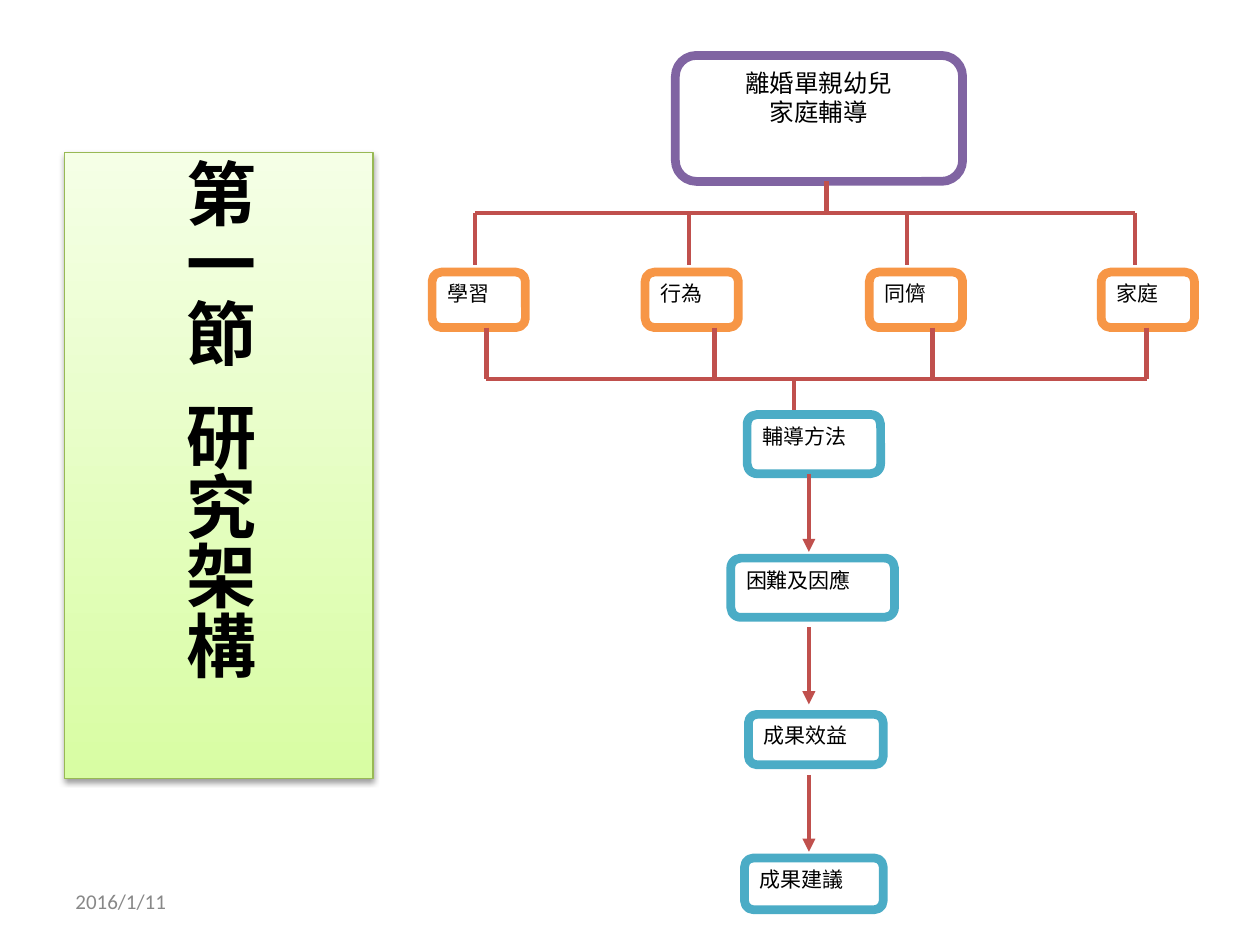
from lxml.etree import SubElement
from pptx import Presentation
from pptx.dml.color import RGBColor
from pptx.enum.shapes import MSO_CONNECTOR, MSO_SHAPE
from pptx.enum.text import MSO_ANCHOR, PP_ALIGN
from pptx.oxml import parse_xml
from pptx.oxml.ns import nsdecls, qn
from pptx.util import Inches, Pt

WHITE = RGBColor(0xFF, 0xFF, 0xFF)
BLACK = RGBColor(0x00, 0x00, 0x00)
GRAY = RGBColor(0x88, 0x88, 0x88)
PURPLE = RGBColor(0x80, 0x64, 0xA2)
ORANGE = RGBColor(0xF7, 0x96, 0x46)
TEAL = RGBColor(0x4B, 0xAC, 0xC6)
RED = RGBColor(0xC0, 0x50, 0x4D)
GREEN = RGBColor(0x98, 0xB9, 0x54)
GREEN_TOP = RGBColor(0xF5, 0xFF, 0xE6)
GREEN_BOTTOM = RGBColor(0xD8, 0xFD, 0xA3)

# Flowchart grid, in inches
UPPER_BAR, LOWER_BAR = 1.69, 3.01
ASPECT_TOP, ASPECT_HEIGHT = 2.16, 0.44
ARROW_X = 6.42

# Label, box left, upper branch x, lower branch x
ASPECTS = [
    ("學習", 3.43, 3.77, 3.86),
    ("行為", 5.12, 5.47, 5.67),
    ("同儕", 6.90, 7.20, 7.40),
    ("家庭", 8.74, 9.01, 9.10),
]
# Label and box place
STEPS = [
    ("輔導方法", (5.93, 3.29, 1.06, 0.47)),
    ("困難及因應", (5.80, 4.43, 1.30, 0.47)),
    ("成果效益", (5.94, 5.67, 1.07, 0.40)),
    ("成果建議", (5.91, 6.81, 1.10, 0.41)),
]
ARROWS = [(3.76, 4.38), (4.98, 5.59), (6.15, 6.76)]


def write_text(shape, text, size=12, color=BLACK, font="Calibri", bold=False,
               align=PP_ALIGN.LEFT, anchor=MSO_ANCHOR.TOP):
    frame = shape.text_frame
    frame.word_wrap = True
    frame.vertical_anchor = anchor
    frame.text = text
    for paragraph in frame.paragraphs:
        paragraph.alignment = align
        paragraph.font.size = Pt(size)
        paragraph.font.name = font
        paragraph.font.bold = bold
        paragraph.font.color.rgb = color


def add_box(slide, text, place, color, **text_format):
    shape = slide.shapes.add_shape(MSO_SHAPE.ROUNDED_RECTANGLE, *map(Inches, place))
    shape.shadow.inherit = False
    shape.fill.solid()
    shape.fill.fore_color.rgb = WHITE
    shape.line.color.rgb = color
    shape.line.width = Pt(5)
    write_text(shape, text, **text_format)


def add_line(slide, start, end, arrow=False):
    connector = slide.shapes.add_connector(
        MSO_CONNECTOR.STRAIGHT, *map(Inches, (*start, *end)))
    connector.line.color.rgb = RED
    connector.line.width = Pt(2.5)
    if arrow:
        SubElement(connector.line._get_or_add_ln(), qn("a:tailEnd"), type="triangle")
    SubElement(connector._element.spPr, qn("a:effectLst"))


def format_title(title):
    title.left, title.top, title.width, title.height = map(
        Inches, (0.51, 1.21, 2.45, 4.97))
    title.fill.gradient()
    title.fill.gradient_angle = 270
    for stop, color in zip(title.fill.gradient_stops, (GREEN_TOP, GREEN_BOTTOM)):
        stop.color.rgb = color
    title.line.color.rgb = GREEN
    title.line.width = Pt(0.75)
    # Soft shadow below the panel
    title._element.spPr.append(parse_xml(
        f'<a:effectLst {nsdecls("a")}><a:outerShdw blurRad="40000" dist="20000" '
        'dir="5400000" rotWithShape="0"><a:srgbClr val="000000">'
        '<a:alpha val="38000"/></a:srgbClr></a:outerShdw></a:effectLst>'))
    write_text(title, "第一節  研究架構", size=40, font="Arial", bold=True,
               align=PP_ALIGN.CENTER, anchor=MSO_ANCHOR.MIDDLE)
    title.text_frame._txBody.bodyPr.set("vert", "eaVert")


def add_aspects(slide):
    # Horizontal bars above and below the four boxes
    first, last = ASPECTS[0], ASPECTS[-1]
    add_line(slide, (first[2], UPPER_BAR), (last[2], UPPER_BAR))
    add_line(slide, (first[3], LOWER_BAR), (last[3], LOWER_BAR))
    # Stems to the topic and to the first step
    add_line(slide, (6.56, 1.44), (6.56, UPPER_BAR))
    add_line(slide, (6.30, LOWER_BAR), (6.30, 3.26))
    for label, left, upper_x, lower_x in ASPECTS:
        add_box(slide, label, (left, ASPECT_TOP, 0.74, ASPECT_HEIGHT), ORANGE)
        add_line(slide, (upper_x, UPPER_BAR), (upper_x, 2.10))
        add_line(slide, (lower_x, ASPECT_TOP + ASPECT_HEIGHT), (lower_x, LOWER_BAR))


def add_steps(slide):
    for label, place in STEPS:
        add_box(slide, label, place, TEAL)
    for top, bottom in ARROWS:
        add_line(slide, (ARROW_X, top), (ARROW_X, bottom), arrow=True)


def main():
    presentation = Presentation()
    presentation.slide_width, presentation.slide_height = Inches(10), Inches(7.5)
    slide = presentation.slides.add_slide(presentation.slide_layouts[5])
    slide.background.fill.solid()
    slide.background.fill.fore_color.rgb = WHITE

    # Date
    date = slide.shapes.add_textbox(*map(Inches, (0.5, 6.95, 1.98, 0.4)))
    write_text(date, "2016/1/11", color=GRAY, anchor=MSO_ANCHOR.MIDDLE)

    # Flowchart
    add_box(slide, "離婚單親幼兒\n家庭輔導", (5.36, 0.44, 2.28, 1), PURPLE,
            size=14, align=PP_ALIGN.CENTER)
    add_aspects(slide)
    add_steps(slide)

    # Vertical title panel
    format_title(slide.shapes.title)
    presentation.save("out.pptx")


if __name__ == "__main__":
    main()
